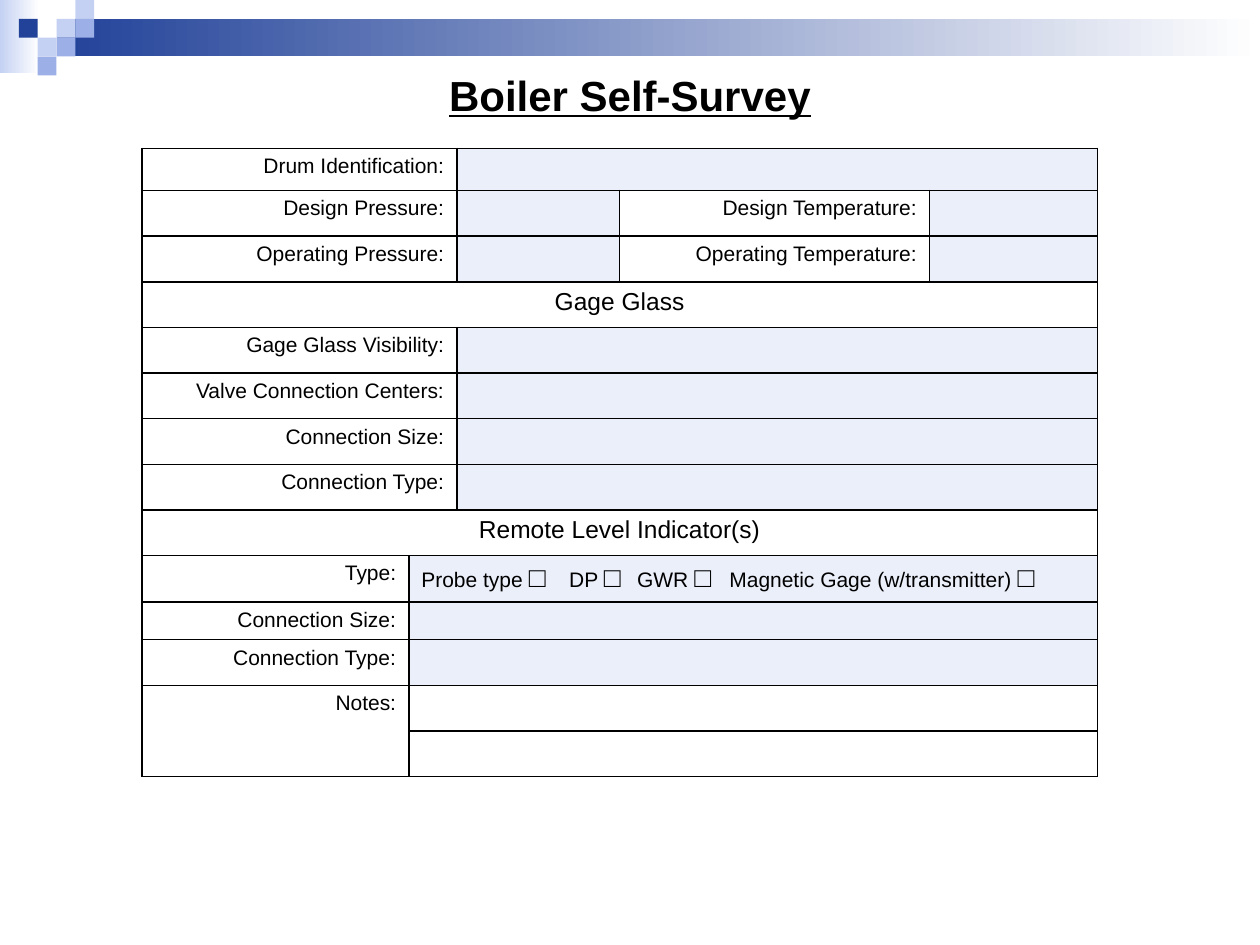
from dataclasses import dataclass

from lxml import etree
from pptx import Presentation
from pptx.dml.color import RGBColor
from pptx.enum.shapes import MSO_SHAPE
from pptx.enum.text import MSO_AUTO_SIZE, PP_ALIGN
from pptx.oxml.ns import qn
from pptx.util import Cm, Pt

RECTANGLE = MSO_SHAPE.RECTANGLE
LEFT, CENTER, RIGHT = PP_ALIGN.LEFT, PP_ALIGN.CENTER, PP_ALIGN.RIGHT
GROW = MSO_AUTO_SIZE.SHAPE_TO_FIT_TEXT
BLANK_LAYOUT = 6


@dataclass(frozen=True)
class Theme:
    font: str = "Arial"
    text: str = "000000"
    paper: str = "FFFFFF"
    entry: str = "EBEFFA"
    navy: str = "224299"
    pale: str = "C4D1F2"
    mid: str = "9CB0E7"
    title_size: int = 24
    section_size: int = 14
    label_size: int = 12
    checkbox_size: int = 16
    border_width: int = 1


THEME = Theme()
COLUMN_WIDTHS = [5.38, 0.97, 3.28, 6.25, 3.38]
COLUMN_COUNT = len(COLUMN_WIDTHS)
FIRST_ROW, NORMAL_ROW, SHORT_ROW = 0.85, 0.92, 0.75
CHECKBOX_TABS = [2.98, 4.35, 6.21]
CHECKBOX_LABELS = ["Probe type", "DP", "GWR", "Magnetic Gage (w/transmitter)"]

# Each row lists (kind, columns spanned, text).
LABEL, ENTRY, SECTION, CHECKBOXES, NOTE = "label", "entry", "section", "checkboxes", "note"


def wide_row(label):
    return [(LABEL, 2, label), (ENTRY, 3, "")]


def split_row(left, right):
    return [(LABEL, 2, left), (ENTRY, 1, ""), (LABEL, 1, right), (ENTRY, 1, "")]


def indicator_row(label, kind=ENTRY):
    return [(LABEL, 1, label), (kind, 4, "")]


SURVEY_ROWS = [
    wide_row("Drum Identification:"),
    split_row("Design Pressure:", "Design Temperature:"),
    split_row("Operating Pressure:", "Operating Temperature:"),
    [(SECTION, 5, "Gage Glass")],
    wide_row("Gage Glass Visibility:"),
    wide_row("Valve Connection Centers:"),
    wide_row("Connection Size:"),
    wide_row("Connection Type:"),
    [(SECTION, 5, "Remote Level Indicator(s)")],
    indicator_row("Type:", CHECKBOXES),
    indicator_row("Connection Size:"),
    indicator_row("Connection Type:"),
    indicator_row("Notes:", NOTE),
    indicator_row("", NOTE),
]
SHORT_ROW_INDEX = 10
NOTES_ROW_INDEX = 12


def add_span(para, text, size, bold=None, underline=None):
    span = para.add_run()
    span.text = text
    font = span.font
    font.name, font.size = THEME.font, Pt(size)
    font.bold, font.underline = bold, underline
    font.color.rgb = RGBColor.from_string(THEME.text)


def add_block(page, left, top, width, height, color, fade=False):
    """Add a borderless rectangle, fading to the paper colour on request."""
    block = page.shapes.add_shape(RECTANGLE, Cm(left), Cm(top), Cm(width), Cm(height))
    block.shadow.inherit = False
    block.line.fill.background()
    if fade:
        block.fill.gradient()
        block.fill.gradient_angle = 0
        for stop, shade in zip(block.fill.gradient_stops, (color, THEME.paper)):
            stop.color.rgb = RGBColor.from_string(shade)
    else:
        block.fill.solid()
        block.fill.fore_color.rgb = RGBColor.from_string(color)


def add_header(page, left, top, width):
    unit = 0.38
    add_block(page, left, top, 0.79, 1.47, THEME.pale, fade=True)
    add_block(page, left + 3 * unit, top + unit, width - 3 * unit, 2 * unit,
              THEME.navy, fade=True)
    squares = [(3, 1, THEME.pale), (4, 0, THEME.pale), (4, 1, THEME.mid),
               (2, 2, THEME.pale), (1, 1, THEME.navy), (3, 2, THEME.mid),
               (2, 3, THEME.mid)]
    for column, row, color in squares:
        add_block(page, left + column * unit, top + row * unit, unit, unit, color)


def add_title(page, left, top, width, height):
    box = page.shapes.add_textbox(Cm(left), Cm(top), Cm(width), Cm(height))
    box.text_frame.word_wrap = True
    box.text_frame.auto_size = GROW
    para = box.text_frame.paragraphs[0]
    para.alignment = CENTER
    add_span(para, "Boiler Self-Survey", THEME.title_size, bold=True, underline=True)


def style_cell(cell, color, open_side=None):
    """Draw the borders, leaving open_side bare, then fill the cell."""
    properties = cell._tc.get_or_add_tcPr()
    for side in "LRTB":
        line = etree.SubElement(properties, qn(f"a:ln{side}"),
                                w=str(Pt(THEME.border_width)))
        if side == open_side:
            etree.SubElement(line, qn("a:noFill"))
        else:
            solid = etree.SubElement(line, qn("a:solidFill"))
            etree.SubElement(solid, qn("a:srgbClr"), val=THEME.text)
    cell.fill.solid()
    cell.fill.fore_color.rgb = RGBColor.from_string(color)


def add_checkboxes(para):
    tabs = etree.SubElement(para._p.get_or_add_pPr(), qn("a:tabLst"))
    for position in CHECKBOX_TABS:
        etree.SubElement(tabs, qn("a:tab"), pos=str(Cm(position)), algn="l")
    for index, label in enumerate(CHECKBOX_LABELS):
        gap = "\t" if index else ""
        add_span(para, f"{gap}{label} ", THEME.label_size)
        add_span(para, "□", THEME.checkbox_size)


def fill_cell(cell, kind, text):
    para = cell.text_frame.paragraphs[0]
    para.alignment = {LABEL: RIGHT, SECTION: CENTER}.get(kind, LEFT)
    if kind == CHECKBOXES:
        add_checkboxes(para)
    elif text:
        size = THEME.section_size if kind == SECTION else THEME.label_size
        add_span(para, text, size)
    else:
        # Keeps an empty cell from growing its row.
        etree.SubElement(para._p, qn("a:endParaRPr"), sz=str(THEME.label_size * 100))


def add_survey(page, left, top):
    heights = [NORMAL_ROW] * len(SURVEY_ROWS)
    heights[0], heights[SHORT_ROW_INDEX] = FIRST_ROW, SHORT_ROW
    frame = page.shapes.add_table(len(heights), COLUMN_COUNT, Cm(left), Cm(top),
                                  Cm(sum(COLUMN_WIDTHS)), Cm(sum(heights)))
    table = frame.table
    table.first_row = table.horz_banding = False
    for column, width in zip(table.columns, COLUMN_WIDTHS):
        column.width = Cm(width)
    for row, height in zip(table.rows, heights):
        row.height = Cm(height)

    open_sides = {NOTES_ROW_INDEX: "B", NOTES_ROW_INDEX + 1: "T"}
    for row_index, fields in enumerate(SURVEY_ROWS):
        start = 0
        for kind, span, text in fields:
            color = THEME.entry if kind in (ENTRY, CHECKBOXES) else THEME.paper
            open_side = open_sides.get(row_index) if kind == LABEL else None
            for column in range(start, start + span):
                cell = table.cell(row_index, column)
                style_cell(cell, color, open_side)
                if column > start:
                    fill_cell(cell, ENTRY, "")
            first = table.cell(row_index, start)
            if span > 1:
                first.merge(table.cell(row_index, start + span - 1))
            fill_cell(first, kind, text)
            start += span


def main():
    deck = Presentation()
    deck.slide_width, deck.slide_height = Cm(25.4), Cm(19.05)
    page = deck.slides.add_slide(deck.slide_layouts[BLANK_LAYOUT])
    add_header(page, 0, 0, 25.4)
    add_title(page, 6.35, 1.27, 12.7, 1.27)
    add_survey(page, 2.86, 2.99)
    deck.save("out.pptx")


if __name__ == "__main__":
    main()
